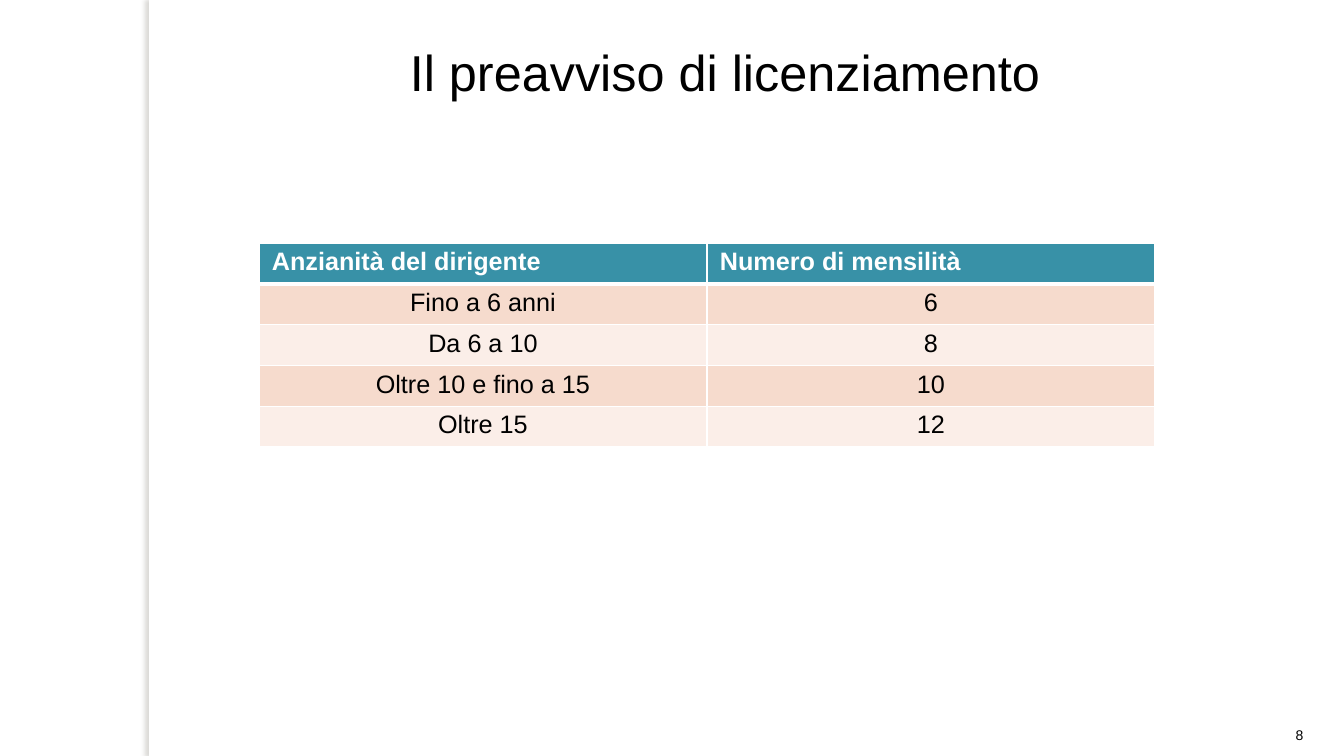
import pptx
import pptx.util
import pptx.dml.color
import pptx.enum.shapes
import pptx.enum.text
import pptx.oxml
import pptx.oxml.ns

ALIGN = pptx.enum.text.PP_ALIGN
ANCHOR = pptx.enum.text.MSO_ANCHOR
NS = pptx.oxml.ns.nsdecls("a")


def px(n):
    return pptx.util.Emu(round(n * 914400 / 100.8))


def color(code):
    return pptx.dml.color.RGBColor.from_string(code)


def write(frame, text, size=18, ink="000000", bold=False, align=ALIGN.CENTER,
          anchor=ANCHOR.TOP, font="Arial"):
    frame.word_wrap = True
    frame.vertical_anchor = anchor
    para = frame.paragraphs[0]
    para.alignment = align
    run = para.add_run()
    run.text = text
    run.font.name = font
    run.font.size = pptx.util.Pt(size)
    run.font.bold = bold
    run.font.color.rgb = color(ink)


class Page:
    white = "FFFFFF"
    head = "3891A7"
    bands = ("F6DBCD", "FBEEE8")

    def __init__(self, deck):
        self.slide = deck.slides.add_slide(deck.slide_layouts[5])
        self.shapes = self.slide.shapes
        fill = self.slide.background.fill
        fill.solid()
        fill.fore_color.rgb = color(self.white)

    def bar(self, *box):
        shape = self.shapes.add_shape(
            pptx.enum.shapes.MSO_SHAPE.RECTANGLE, *map(px, box))
        shape.fill.solid()
        shape.fill.fore_color.rgb = color(self.white)
        shape.line.fill.background()
        shape._element.spPr.append(pptx.oxml.parse_xml(
            f'<a:effectLst {NS}><a:outerShdw blurRad="38100" dist="38100" '
            'dir="10800000" algn="tl" rotWithShape="0"><a:srgbClr val="736F63">'
            '<a:alpha val="25000"/></a:srgbClr></a:outerShdw></a:effectLst>'))

    def title(self, text, *box):
        shape = self.shapes.title
        shape.left, shape.top, shape.width, shape.height = map(px, box)
        shape.text_frame.auto_size = pptx.enum.text.MSO_AUTO_SIZE.SHAPE_TO_FIT_TEXT
        write(shape.text_frame, text, size=36)

    def label(self, text, *box, **style):
        shape = self.shapes.add_textbox(*map(px, box))
        write(shape.text_frame, text, **style)

    def edge(self, cell, side, width):
        cell._tc.get_or_add_tcPr().append(pptx.oxml.parse_xml(
            f'<a:{side} {NS} w="{pptx.util.Pt(width)}"><a:solidFill>'
            f'<a:srgbClr val="{self.white}"/></a:solidFill></a:{side}>'))

    def table(self, rows, *box):
        grid = self.shapes.add_table(
            len(rows), len(rows[0]), *map(px, box)).table
        for i, row in enumerate(rows):
            top = i == 0
            for j, text in enumerate(row):
                cell = grid.cell(i, j)
                cell.margin_left = cell.margin_right = px(13)
                cell.margin_top = cell.margin_bottom = px(5)
                self.edge(cell, "lnL", 1)
                self.edge(cell, "lnR", 1)
                self.edge(cell, "lnT", 3 if i == 1 else 1)
                self.edge(cell, "lnB", 3 if top else 1)
                cell.fill.solid()
                cell.fill.fore_color.rgb = color(
                    self.head if top else self.bands[(i - 1) % 2])
                write(cell.text_frame, text, bold=top,
                      ink=self.white if top else "000000",
                      align=ALIGN.LEFT if top else ALIGN.CENTER)


def main():
    deck = pptx.Presentation()
    deck.slide_width, deck.slide_height = px(1344), px(756)
    page = Page(deck)
    page.bar(149, 0, 11, 756)
    page.label("8", 1266, 696, 67, 52, size=10, anchor=ANCHOR.BOTTOM)
    page.table([
        ("Anzianità del dirigente", "Numero di mensilità"),
        ("Fino a 6 anni", "6"),
        ("Da 6 a 10", "8"),
        ("Oltre 10 e fino a 15", "10"),
        ("Oltre 15", "12"),
    ], 259, 243, 896, 204)
    page.title("Il preavviso di licenziamento", 217, 36, 1016, 72)
    deck.save("out.pptx")


if __name__ == "__main__":
    main()
